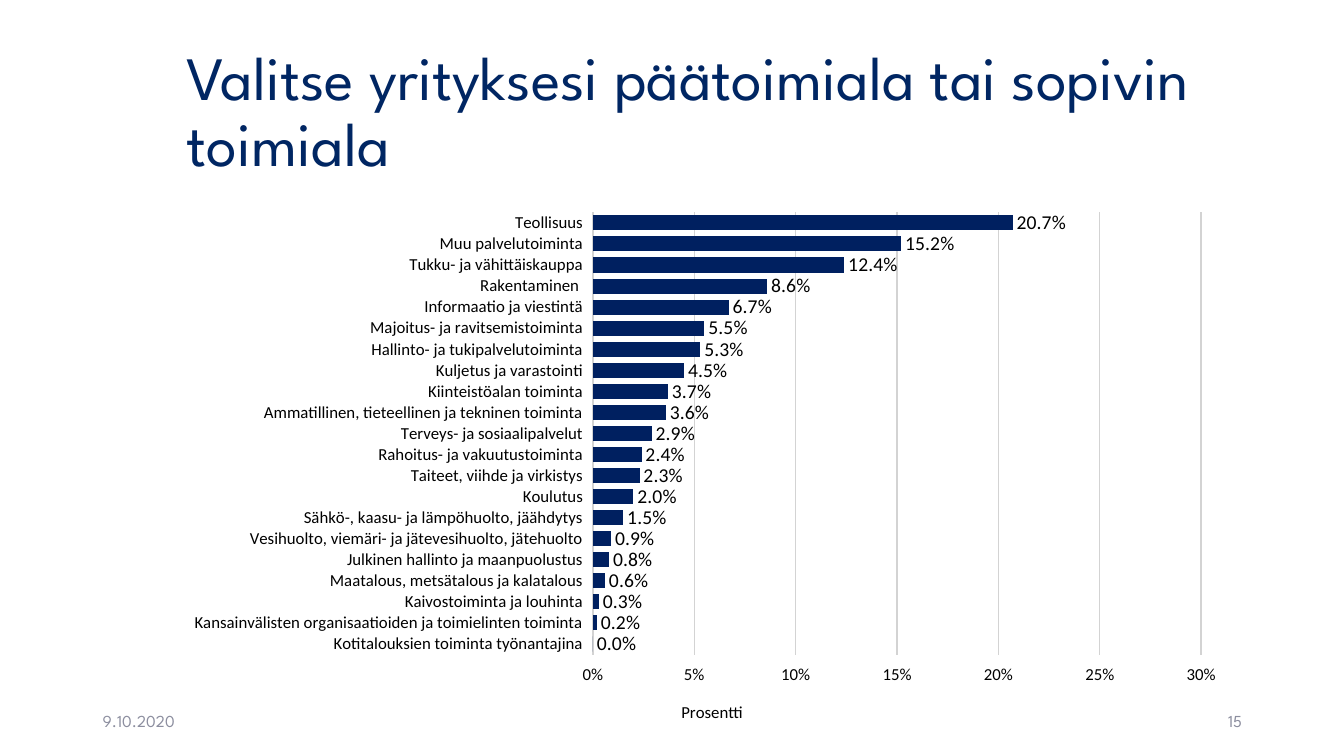
from dataclasses import dataclass

from lxml import etree
from pptx import Presentation
from pptx.chart.data import CategoryChartData
from pptx.dml.color import RGBColor
from pptx.enum.chart import XL_CHART_TYPE, XL_LABEL_POSITION, XL_TICK_MARK
from pptx.enum.text import MSO_ANCHOR, MSO_AUTO_SIZE, PP_ALIGN
from pptx.oxml.ns import qn
from pptx.util import Cm, Pt

BAR_CLUSTERED = XL_CHART_TYPE.BAR_CLUSTERED
OUTSIDE_END = XL_LABEL_POSITION.OUTSIDE_END
TICK_OUTSIDE = XL_TICK_MARK.OUTSIDE
MIDDLE = MSO_ANCHOR.MIDDLE
NO_AUTOFIT = MSO_AUTO_SIZE.NONE
LEFT, RIGHT = PP_ALIGN.LEFT, PP_ALIGN.RIGHT

TITLE_ONLY_LAYOUT = 5
HEADING_FONT, CHART_FONT = "League Spartan", "Calibri"
COLORS = {
    "title": "002663",
    "footer": "8C8E9F",
    "bar": "002060",
    "grid": "D3D3D3",
    "text": "000000",
    "plot": "FFFFFF",
}


@dataclass
class Footer:
    text: str
    left: float
    alignment: PP_ALIGN


@dataclass
class Industry:
    name: str
    share: float


FOOTERS = [Footer("9.10.2020", 2.34, LEFT), Footer("15", 23.93, RIGHT)]

# Bar charts stack categories from the bottom up
INDUSTRIES = [
    Industry("Kotitalouksien toiminta työnantajina", 0),
    Industry("Kansainvälisten organisaatioiden ja toimielinten toiminta", 0.002),
    Industry("Kaivostoiminta ja louhinta", 0.003),
    Industry("Maatalous, metsätalous ja kalatalous", 0.006),
    Industry("Julkinen hallinto ja maanpuolustus", 0.008),
    Industry("Vesihuolto, viemäri- ja jätevesihuolto, jätehuolto", 0.009),
    Industry("Sähkö-, kaasu- ja lämpöhuolto, jäähdytys", 0.015),
    Industry("Koulutus", 0.02),
    Industry("Taiteet, viihde ja virkistys", 0.023),
    Industry("Rahoitus- ja vakuutustoiminta", 0.024),
    Industry("Terveys- ja sosiaalipalvelut", 0.029),
    Industry("Ammatillinen, tieteellinen ja tekninen toiminta", 0.036),
    Industry("Kiinteistöalan toiminta", 0.037),
    Industry("Kuljetus ja varastointi", 0.045),
    Industry("Hallinto- ja tukipalvelutoiminta", 0.053),
    Industry("Majoitus- ja ravitsemistoiminta", 0.055),
    Industry("Informaatio ja viestintä", 0.067),
    Industry("Rakentaminen ", 0.086),
    Industry("Tukku- ja vähittäiskauppa", 0.124),
    Industry("Muu palvelutoiminta", 0.152),
    Industry("Teollisuus", 0.207),
]


def color(name: str) -> RGBColor:
    return RGBColor.from_string(COLORS[name])


def set_font(font, size: float, color_name: str, family: str) -> None:
    font.size = Pt(size)
    font.bold = False
    font.name = family
    font.color.rgb = color(color_name)


def set_layout(parent, index: int, **settings) -> None:
    """Place a chart part by fractions of the chart's size."""
    for old_layout in parent.findall(qn("c:layout")):
        parent.remove(old_layout)
    layout = etree.Element(qn("c:layout"))
    manual = etree.SubElement(layout, qn("c:manualLayout"))
    for tag, value in settings.items():
        etree.SubElement(manual, qn(f"c:{tag}")).set("val", str(value))
    parent.insert(index, layout)


def add_title(slide, text: str) -> None:
    title = slide.shapes.title
    title.left, title.top = Cm(4.45), Cm(1.02)
    title.width, title.height = Cm(26.9), Cm(3.68)
    frame = title.text_frame
    frame.text = text
    frame.word_wrap = True
    frame.auto_size = NO_AUTOFIT
    frame.vertical_anchor = MIDDLE
    paragraph = frame.paragraphs[0]
    paragraph.alignment = LEFT
    paragraph.line_spacing = 0.9
    set_font(paragraph.font, 44, "title", HEADING_FONT)


def add_footer(slide, footer: Footer) -> None:
    box = slide.shapes.add_textbox(Cm(footer.left), Cm(17.65), Cm(7.62), Cm(1.02))
    frame = box.text_frame
    frame.word_wrap = True
    frame.vertical_anchor = MIDDLE
    paragraph = frame.paragraphs[0]
    paragraph.text = footer.text
    paragraph.alignment = footer.alignment
    set_font(paragraph.font, 12, "footer", HEADING_FONT)


def add_industry_chart(slide) -> None:
    data = CategoryChartData()
    data.categories = [industry.name for industry in INDUSTRIES]
    data.add_series("Series 1", [industry.share for industry in INDUSTRIES])
    chart = slide.shapes.add_chart(
        BAR_CLUSTERED, Cm(4.45), Cm(5.08), Cm(26.9), Cm(13.59), data
    ).chart
    chart.has_legend = False
    chart.has_title = False
    set_font(chart.font, 11, "text", CHART_FONT)

    # Axes
    for axis in (chart.category_axis, chart.value_axis):
        axis.major_tick_mark = TICK_OUTSIDE
        axis.format.line.fill.background()
        set_font(axis.tick_labels.font, 12, "text", CHART_FONT)
    chart.category_axis.has_major_gridlines = False
    value_axis = chart.value_axis
    value_axis.minimum_scale, value_axis.maximum_scale = 0, 0.3
    value_axis.major_unit = 0.05
    value_axis.tick_labels.number_format = "0%"
    value_axis.tick_labels.number_format_is_linked = False
    value_axis.has_major_gridlines = True
    grid_line = value_axis.major_gridlines.format.line
    grid_line.color.rgb = color("grid")
    grid_line.width = Pt(1)
    axis_title = value_axis.axis_title
    axis_title.text_frame.text = "Prosentti"
    set_font(axis_title.text_frame.paragraphs[0].font, 12, "text", CHART_FONT)

    # Bars and their labels
    plot = chart.plots[0]
    plot.gap_width = 40
    plot.vary_by_categories = False
    series = plot.series[0]
    series.format.fill.solid()
    series.format.fill.fore_color.rgb = color("bar")
    labels = series.data_labels
    labels.show_value = True
    labels.position = OUTSIDE_END
    labels.number_format = "0.0%"
    labels.number_format_is_linked = False
    set_font(labels.font, 14, "text", CHART_FONT)

    # Plot area and axis title positions
    plot_area = chart.element.find(f".//{qn('c:plotArea')}")
    set_layout(plot_area, 0, layoutTarget="inner", xMode="edge", yMode="edge",
               x=0.39, y=0.02, w=0.57, h=0.82)
    set_layout(axis_title.element if hasattr(axis_title, "element")
               else plot_area.find(f".//{qn('c:title')}"), 1,
               xMode="edge", yMode="edge", x=0.47, y=0.92)
    properties = etree.SubElement(plot_area, qn("c:spPr"))
    fill = etree.SubElement(properties, qn("a:solidFill"))
    etree.SubElement(fill, qn("a:srgbClr")).set("val", COLORS["plot"])


def main() -> None:
    presentation = Presentation()
    presentation.slide_width, presentation.slide_height = Cm(33.87), Cm(19.05)
    layout = presentation.slide_layouts[TITLE_ONLY_LAYOUT]
    slide = presentation.slides.add_slide(layout)
    add_title(slide, "Valitse yrityksesi päätoimiala tai sopivin toimiala")
    for footer in FOOTERS:
        add_footer(slide, footer)
    add_industry_chart(slide)
    presentation.save("out.pptx")


if __name__ == "__main__":
    main()
